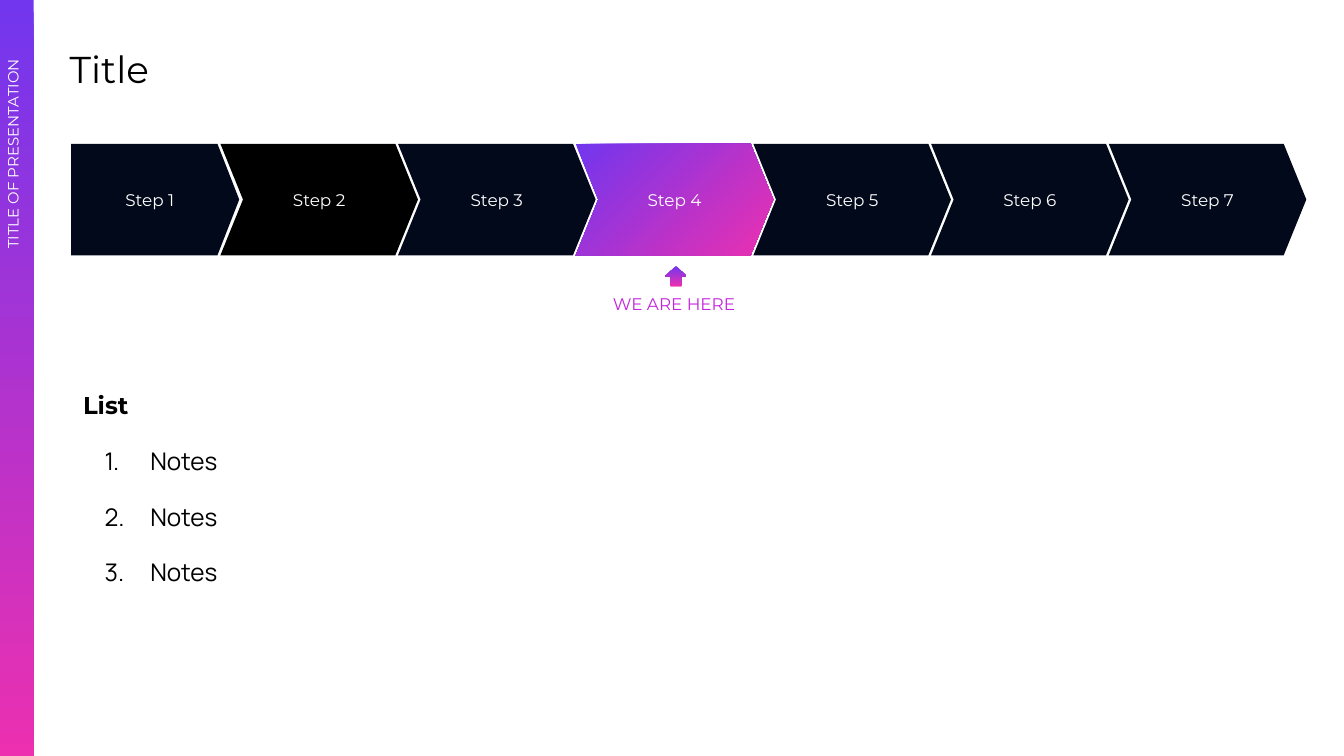
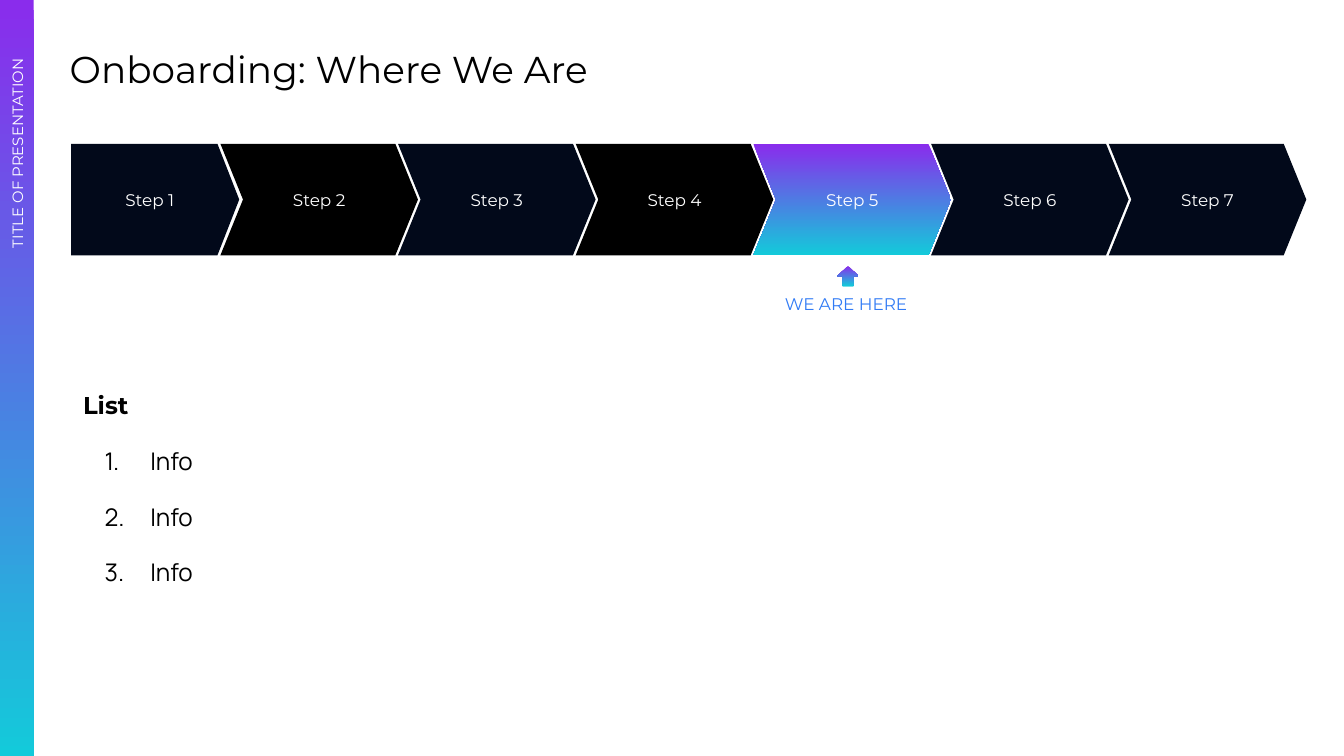
from dataclasses import dataclass

from lxml.etree import SubElement
from pptx import Presentation
from pptx.dml.color import RGBColor
from pptx.enum.shapes import MSO_SHAPE as Preset
from pptx.enum.text import MSO_ANCHOR as Anchor, MSO_AUTO_SIZE as AutoSize, PP_ALIGN as Align
from pptx.oxml.ns import qn
from pptx.shapes.autoshape import Shape
from pptx.slide import Slide
from pptx.text.text import TextFrame, _Paragraph as Paragraph
from pptx.util import Inches, Pt


@dataclass(frozen=True)
class Theme:
    ink: str = "000000"
    paper: str = "FFFFFF"
    step: str = "02091A"
    step_alternate: str = "000000"
    heading_font: str = "Montserrat"
    body_font: str = "Manrope"
    title_size: int = 20
    list_size: int = 13
    label_size: int = 9
    band_size: int = 8


@dataclass(frozen=True)
class Box:
    left: float
    top: float
    width: float
    height: float

    def lengths(self) -> tuple[int, ...]:
        return tuple(Inches(n) for n in (self.left, self.top, self.width, self.height))


@dataclass(frozen=True)
class Gradient:
    start: str
    end: str
    angle: int = 90  # clockwise degrees


@dataclass(frozen=True)
class StepsSlide:
    title: str
    list_item: str
    accent: Gradient
    current_fill: Gradient
    current_step: int
    alternate_steps: frozenset[int]
    marker_left: float
    marker_color: str
    band_label: Box


THEME = Theme()
SLIDE_WIDTH = 10
SLIDE_HEIGHT = SLIDE_WIDTH * 9 / 16
STEP_COUNT = 7
STEP_TOP, STEP_HEIGHT = 1.07, 0.83
FIRST_STEP = Box(0.53, STEP_TOP, 1.25, STEP_HEIGHT)
CHEVRON_LEFT, LAST_CHEVRON_LEFT, CHEVRON_WIDTH = 1.64, 8.25, 1.47
CHEVRON_PITCH = (LAST_CHEVRON_LEFT - CHEVRON_LEFT) / (STEP_COUNT - 2)
LIST_ITEM_COUNT = 3

SLIDES = (
    StepsSlide(
        title="Title",
        list_item="Notes",
        accent=Gradient("7136EE", "EC30B0"),
        current_fill=Gradient("7136EE", "EC30B0", 45),
        current_step=4,
        alternate_steps=frozenset({2}),
        marker_left=4.28,
        marker_color="C324DD",
        band_label=Box(-2.26, 2.56, 4.78, 0.34),
    ),
    StepsSlide(
        title="Onboarding: Where We Are",
        list_item="Info",
        accent=Gradient("8A2CEC", "13CADA"),
        current_fill=Gradient("8A2CEC", "13CADA"),
        current_step=5,
        alternate_steps=frozenset({2, 4}),
        marker_left=5.56,
        marker_color="317BF5",
        band_label=Box(-2.16, 2.49, 4.78, 0.47),
    ),
)


def set_margins(frame: TextFrame) -> None:
    frame.word_wrap = True
    frame.margin_left = frame.margin_right = Inches(0.1)
    frame.margin_top = frame.margin_bottom = Inches(0.1)


def style_paragraph(paragraph: Paragraph, size: int, color: str,
                    font: str = THEME.heading_font, bold: bool = False) -> None:
    paragraph.font.name = font
    paragraph.font.size = Pt(size)
    paragraph.font.bold = bold
    paragraph.font.color.rgb = RGBColor.from_string(color)


def add_shape(slide: Slide, preset: Preset, box: Box, paint: str | Gradient) -> Shape:
    shape = slide.shapes.add_shape(preset, *box.lengths())
    shape.shadow.inherit = False
    shape.line.fill.background()
    if isinstance(paint, Gradient):
        shape.fill.gradient()
        shape.fill.gradient_angle = 360 - paint.angle
        for stop, color in zip(shape.fill.gradient_stops, (paint.start, paint.end)):
            stop.color.rgb = RGBColor.from_string(color)
    else:
        shape.fill.solid()
        shape.fill.fore_color.rgb = RGBColor.from_string(paint)
    return shape


def add_text(slide: Slide, box: Box, text: str, size: int, color: str,
             align: Align = Align.LEFT, grow: bool = False) -> Shape:
    label = slide.shapes.add_textbox(*box.lengths())
    frame = label.text_frame
    set_margins(frame)
    frame.auto_size = AutoSize.SHAPE_TO_FIT_TEXT if grow else AutoSize.NONE
    paragraph = frame.paragraphs[0]
    paragraph.text = text
    paragraph.alignment = align
    style_paragraph(paragraph, size, color)
    return label


def add_band(slide: Slide, content: StepsSlide) -> None:
    add_shape(slide, Preset.RECTANGLE, Box(0, 0, 0.25, SLIDE_HEIGHT), content.accent)
    label = add_text(slide, content.band_label, "TITLE OF PRESENTATION",
                     THEME.band_size, THEME.paper, Align.RIGHT, grow=True)
    label.rotation = 270


def add_step(slide: Slide, number: int, paint: str | Gradient) -> None:
    if number == 1:
        preset, box, point = Preset.PENTAGON, FIRST_STEP, 0.195
    else:
        left = CHEVRON_LEFT + (number - 2) * CHEVRON_PITCH
        preset, point = Preset.CHEVRON, 0.203
        box = Box(left, STEP_TOP, CHEVRON_WIDTH, STEP_HEIGHT)
    step = add_shape(slide, preset, box, paint)
    step.adjustments[0] = point
    frame = step.text_frame
    set_margins(frame)
    frame.vertical_anchor = Anchor.MIDDLE
    paragraph = frame.paragraphs[0]
    paragraph.text = f"Step {number}"
    paragraph.alignment = Align.CENTER
    style_paragraph(paragraph, THEME.label_size, THEME.paper)


def add_steps(slide: Slide, content: StepsSlide) -> None:
    for number in range(1, STEP_COUNT + 1):
        if number == content.current_step:
            paint = content.current_fill
        elif number in content.alternate_steps:
            paint = THEME.step_alternate
        else:
            paint = THEME.step
        add_step(slide, number, paint)


def add_marker(slide: Slide, content: StepsSlide) -> None:
    add_text(slide, Box(content.marker_left, 2.11, CHEVRON_WIDTH, 0.35), "WE ARE HERE",
             THEME.label_size, content.marker_color, Align.CENTER, grow=True)
    arrow_box = Box(content.marker_left + 0.67, 1.98, 0.16, 0.15)
    add_shape(slide, Preset.UP_ARROW, arrow_box, content.accent)


def number_paragraph(paragraph: Paragraph) -> None:
    """Give the paragraph a hanging indent and automatic numbering."""
    properties = paragraph._p.get_or_add_pPr()
    properties.set("marL", str(Inches(0.5)))
    properties.set("indent", str(Inches(-0.34)))
    color = SubElement(properties, qn("a:buClr"))
    SubElement(color, qn("a:srgbClr"), val=THEME.ink)
    SubElement(properties, qn("a:buFont"), typeface=THEME.body_font)
    SubElement(properties, qn("a:buAutoNum"), type="arabicPeriod")


def add_list(slide: Slide, item_text: str) -> None:
    body = add_text(slide, Box(0.52, 2.77, 9.09, 2.48), "List", THEME.list_size, THEME.ink)
    frame = body.text_frame
    heading = frame.paragraphs[0]
    heading.font.bold = True
    heading.line_spacing = 1.15
    for _ in range(LIST_ITEM_COUNT):
        item = frame.add_paragraph()
        item.text = item_text
        number_paragraph(item)
        item.line_spacing = 1.15
        item.space_before = Pt(12)
        style_paragraph(item, THEME.list_size, THEME.ink, THEME.body_font)
    item.space_after = Pt(12)


def build_slide(slide: Slide, content: StepsSlide) -> None:
    background = slide.background.fill
    background.solid()
    background.fore_color.rgb = RGBColor.from_string(THEME.paper)
    add_text(slide, Box(0.42, 0.24, 9.32, 0.56), content.title, THEME.title_size, THEME.ink)
    add_steps(slide, content)
    add_marker(slide, content)
    add_list(slide, content.list_item)
    add_band(slide, content)


def main() -> None:
    presentation = Presentation()
    presentation.slide_width = Inches(SLIDE_WIDTH)
    presentation.slide_height = Inches(SLIDE_HEIGHT)
    blank = presentation.slide_layouts[6]
    for content in SLIDES:
        build_slide(presentation.slides.add_slide(blank), content)
    presentation.save("out.pptx")


if __name__ == "__main__":
    main()
